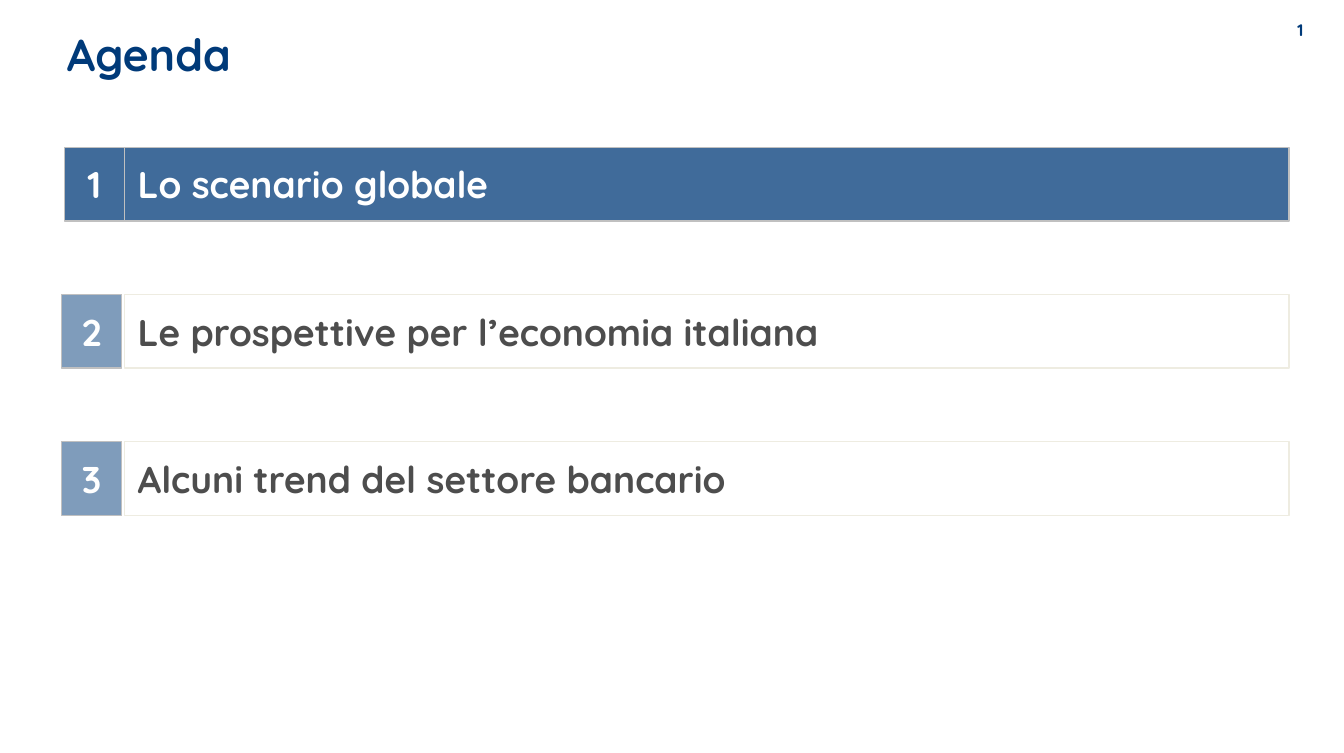
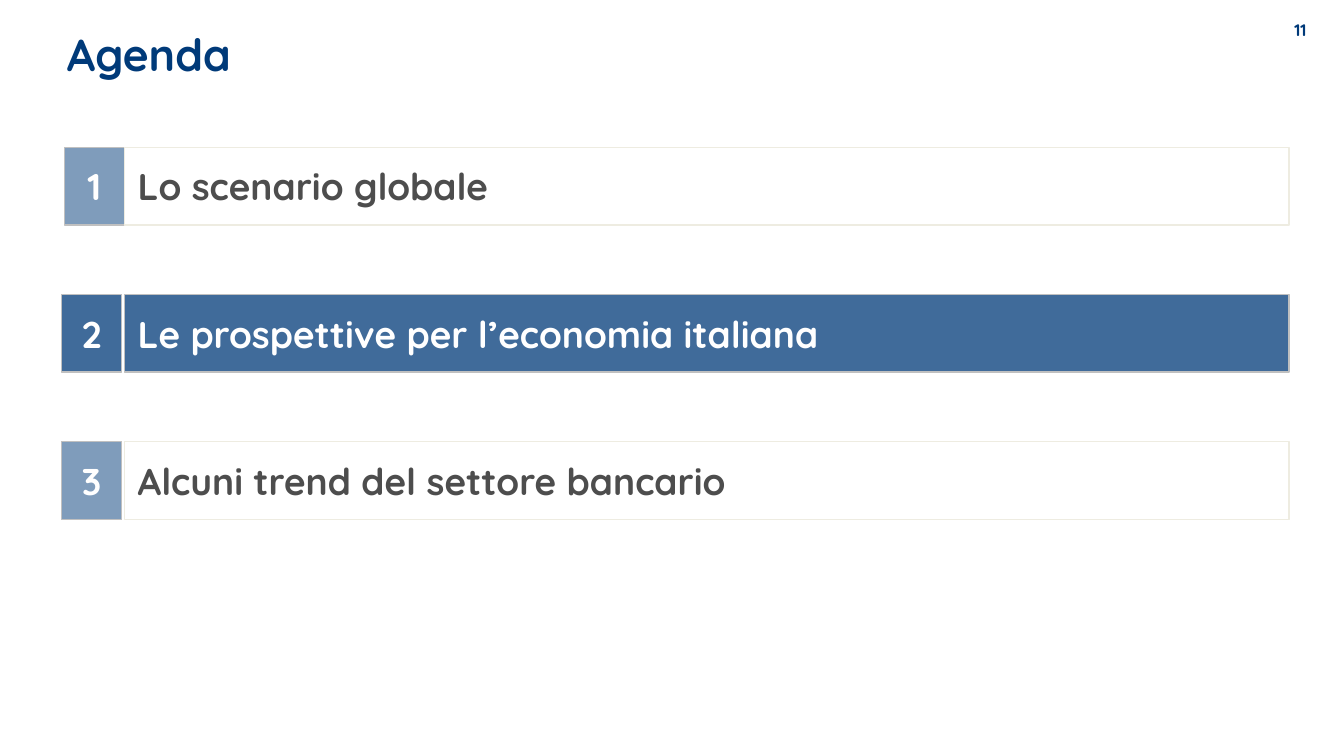
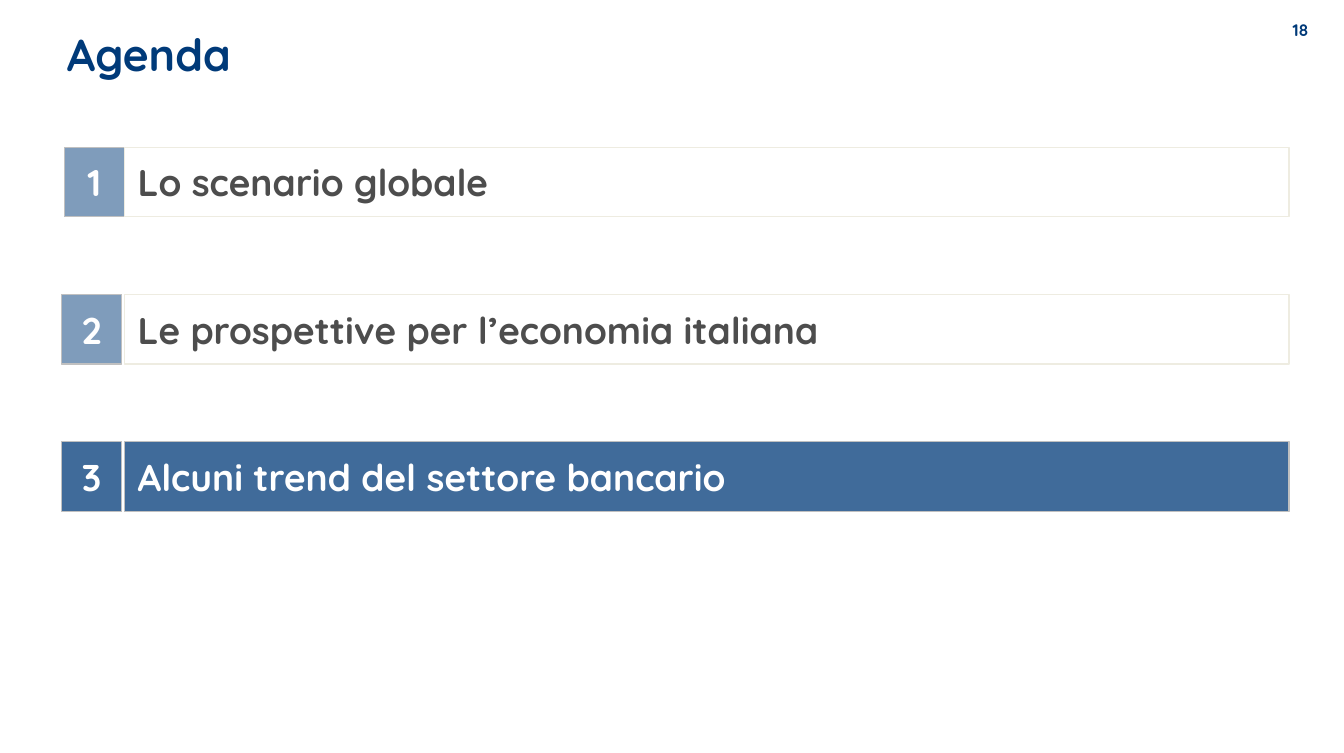
from dataclasses import dataclass

from lxml import etree
from pptx import Presentation
from pptx.dml.color import RGBColor
from pptx.enum.shapes import MSO_SHAPE
from pptx.enum.text import MSO_ANCHOR, MSO_AUTO_SIZE, PP_ALIGN
from pptx.oxml.ns import qn
from pptx.util import Inches, Pt

# Content
TITLE = "Agenda"
TOPICS = [
    "Lo scenario globale",
    "Le prospettive per l’economia italiana",
    "Alcuni trend del settore bancario",
]
# Page number, active topic, bar height
SLIDES = [("1", 1, 0.55), ("11", 2, 0.58), ("18", 3, 0.52)]


@dataclass(frozen=True)
class Theme:
    font: str = "Quicksand"
    navy: str = "003A79"
    white: str = "FFFFFF"
    ink: str = "4D4D4D"
    grey_line: str = "C0C0C0"
    pale_line: str = "EEECE1"
    active_alpha: int = 75
    idle_alpha: int = 50
    title_size: int = 24
    topic_size: int = 20
    page_size: int = 9
    line_width: float = 0.75


T = Theme()

# Geometry, in inches
SLIDE_W, SLIDE_H = 10.04, 5.625
FIRST_TOP, ROW_STEP = 1.1, 1.1
NUMBER_LEFTS, NUMBER_W = (0.48, 0.46, 0.46), 0.45
TOPIC_LEFT, TOPIC_W = 0.93, 8.7


def rgb(value):
    return RGBColor.from_string(value)


def place(sp, left, top, width, height):
    sp.left, sp.top = Inches(left), Inches(top)
    sp.width, sp.height = Inches(width), Inches(height)


def write(sp, text, size, color, align):
    p = sp.text_frame.paragraphs[0]
    p.text = text
    p.alignment = align
    font = p.runs[0].font
    font.name, font.size, font.bold = T.font, Pt(size), True
    font.color.rgb = rgb(color)


def style_title(prs, layout):
    """Set the shared title style on the master and its place on the layout."""
    level = prs.slide_master.element.find(f".//{qn('p:titleStyle')}/{qn('a:lvl1pPr')}")
    level.set("algn", "l")
    spacing = etree.Element(qn("a:lnSpc"))
    etree.SubElement(spacing, qn("a:spcPct")).set("val", "90000")
    level.insert(0, spacing)
    props = level.find(qn("a:defRPr"))
    props.set("sz", str(T.title_size * 100))
    props.set("b", "1")
    fill = props.find(qn("a:solidFill"))
    fill.clear()
    etree.SubElement(fill, qn("a:srgbClr")).set("val", T.navy)
    props.find(qn("a:latin")).set("typeface", T.font)

    title = layout.placeholders[0]
    place(title, 0.39, 0.2, 8.43, 0.45)
    tf = title.text_frame
    tf.auto_size = MSO_AUTO_SIZE.NONE
    tf.vertical_anchor = MSO_ANCHOR.MIDDLE
    tf.margin_left = tf.margin_right = Inches(0.11)
    tf.margin_top = tf.margin_bottom = Inches(0.05)


def add_box(slide, box, text, fill, line, color, align, alpha=100):
    sp = slide.shapes.add_shape(MSO_SHAPE.RECTANGLE, *map(Inches, box))
    sp.shadow.inherit = False
    sp.fill.solid()
    sp.fill.fore_color.rgb = rgb(fill)
    if alpha < 100:
        clr = sp.element.spPr.find(f"{qn('a:solidFill')}/{qn('a:srgbClr')}")
        etree.SubElement(clr, qn("a:alpha")).set("val", str(alpha * 1000))
    sp.line.color.rgb = rgb(line)
    sp.line.width = Pt(T.line_width)
    sp.text_frame.vertical_anchor = MSO_ANCHOR.MIDDLE
    write(sp, text, T.topic_size, color, align)


def add_topic(slide, index, height, active):
    top = FIRST_TOP + index * ROW_STEP
    alpha = T.active_alpha if active else T.idle_alpha
    add_box(slide, (NUMBER_LEFTS[index], top, NUMBER_W, height), str(index + 1),
            T.navy, T.grey_line, T.white, PP_ALIGN.CENTER, alpha)
    if active:
        look = (T.navy, T.grey_line, T.white, PP_ALIGN.LEFT, alpha)
    else:
        look = (T.white, T.pale_line, T.ink, PP_ALIGN.LEFT)
    add_box(slide, (TOPIC_LEFT, top, TOPIC_W, height), TOPICS[index], *look)


def add_page_number(slide, number):
    sp = slide.shapes.add_textbox(*map(Inches, (9.47, 0.1, 0.49, 0.4)))
    sp.text_frame.word_wrap = True
    write(sp, number, T.page_size, T.navy, PP_ALIGN.CENTER)


def main():
    prs = Presentation()
    prs.slide_width, prs.slide_height = Inches(SLIDE_W), Inches(SLIDE_H)
    layout = prs.slide_layouts[5]
    style_title(prs, layout)

    for page, active, height in SLIDES:
        slide = prs.slides.add_slide(layout)
        slide.shapes.title.text_frame.text = TITLE
        for index in range(len(TOPICS)):
            add_topic(slide, index, height, index + 1 == active)
        add_page_number(slide, page)

    prs.save("out.pptx")


if __name__ == "__main__":
    main()
